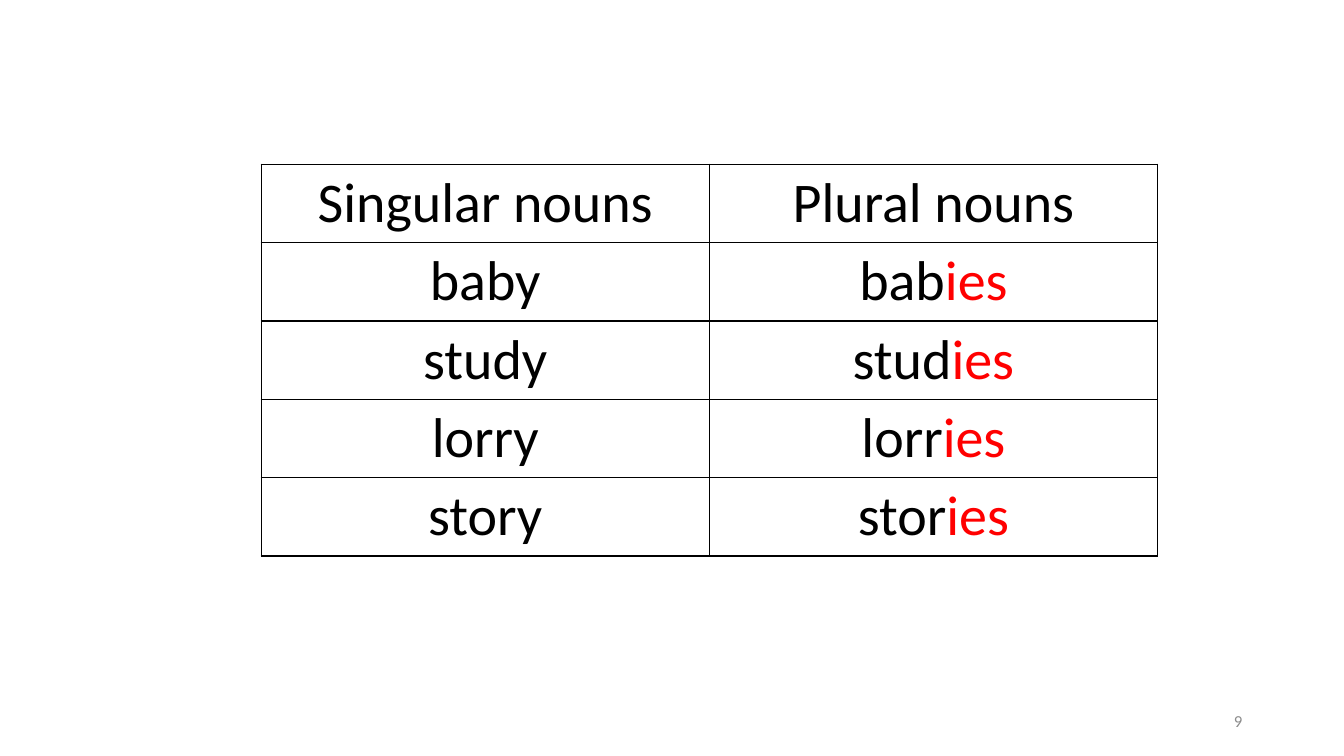
from dataclasses import dataclass

from lxml.etree import SubElement
from pptx import Presentation
from pptx.dml.color import RGBColor
from pptx.enum.text import MSO_ANCHOR, PP_ALIGN
from pptx.oxml.ns import qn
from pptx.slide import Slide
from pptx.table import _Cell as Cell
from pptx.text.text import _Paragraph as Paragraph
from pptx.util import Inches, Pt

BLACK = RGBColor(0x00, 0x00, 0x00)
RED = RGBColor(0xFF, 0x00, 0x00)
GRAY = RGBColor(0x8C, 0x8C, 0x8C)
FONT_NAME = "Calibri"
PLURAL_ENDING = "ies"
BORDER_WIDTH = Pt(1)


@dataclass(frozen=True)
class Noun:
    singular: str

    @property
    def stem(self) -> str:
        return self.singular.removesuffix("y")


NOUNS = [Noun("baby"), Noun("study"), Noun("lorry"), Noun("story")]


def add_text(paragraph: Paragraph, text: str, size: int, color: RGBColor) -> None:
    run = paragraph.add_run()
    run.text = text
    font_format = {"name": FONT_NAME, "size": Pt(size), "bold": False}
    for attribute, value in font_format.items():
        setattr(run.font, attribute, value)
    run.font.color.rgb = color


def add_borders(cell: Cell) -> None:
    properties = cell._tc.get_or_add_tcPr()
    for side in ("a:lnL", "a:lnR", "a:lnT", "a:lnB"):
        line = SubElement(properties, qn(side), w=str(BORDER_WIDTH))
        fill = SubElement(line, qn("a:solidFill"))
        SubElement(fill, qn("a:srgbClr"), val=str(BLACK))


def fill_cell(cell: Cell, text: str, ending: str = "") -> None:
    # Borders come before the fill in the cell properties
    add_borders(cell)
    cell.fill.background()
    paragraph = cell.text_frame.paragraphs[0]
    paragraph.alignment = PP_ALIGN.CENTER
    add_text(paragraph, text, 40, BLACK)
    if ending:
        add_text(paragraph, ending, 40, RED)


def add_noun_table(slide: Slide) -> None:
    row_count = len(NOUNS) + 1
    row_height = Inches(0.77)
    frame = slide.shapes.add_table(
        row_count, 2, Inches(2.59), Inches(1.63), Inches(8.89), row_height * row_count
    )
    table = frame.table
    for attribute in ("first_row", "horz_banding"):
        setattr(table, attribute, False)

    # Header row
    for column, heading in enumerate(("Singular nouns", "Plural nouns")):
        fill_cell(table.cell(0, column), heading)

    # Noun rows
    for row, noun in enumerate(NOUNS, start=1):
        fill_cell(table.cell(row, 0), noun.singular)
        fill_cell(table.cell(row, 1), noun.stem, PLURAL_ENDING)


def add_page_number(slide: Slide, number: str) -> None:
    box = slide.shapes.add_textbox(Inches(9.42), Inches(6.95), Inches(3), Inches(0.4))
    frame_format = {"word_wrap": True, "vertical_anchor": MSO_ANCHOR.MIDDLE}
    for attribute, value in frame_format.items():
        setattr(box.text_frame, attribute, value)
    paragraph = box.text_frame.paragraphs[0]
    paragraph.alignment = PP_ALIGN.RIGHT
    add_text(paragraph, number, 12, GRAY)


def main() -> None:
    presentation = Presentation()
    presentation.slide_width = Inches(13.33)
    presentation.slide_height = Inches(7.5)
    blank_layout = presentation.slide_layouts.get_by_name("Blank")
    slide = presentation.slides.add_slide(blank_layout)
    add_noun_table(slide)
    add_page_number(slide, "9")
    presentation.save("out.pptx")


if __name__ == "__main__":
    main()
